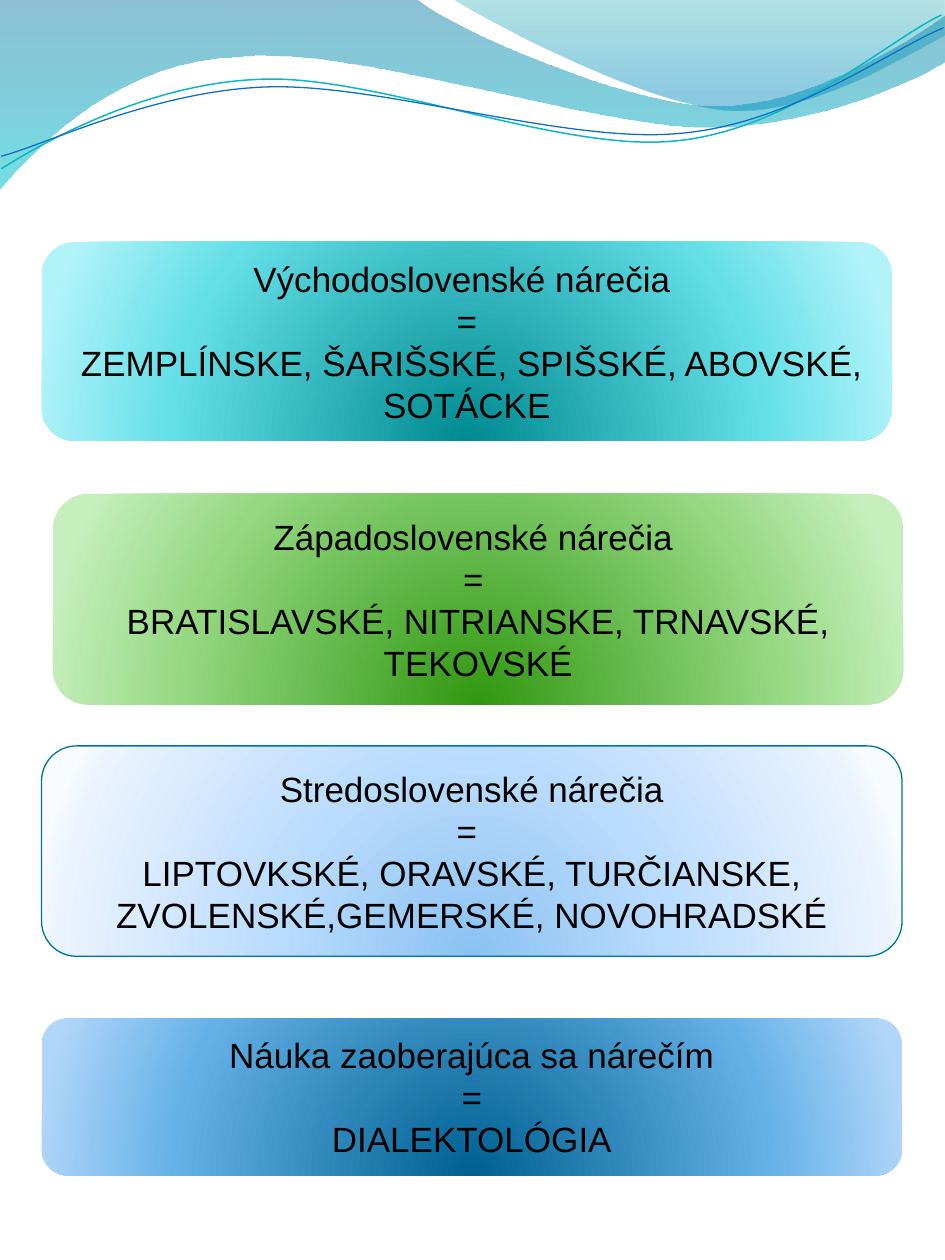
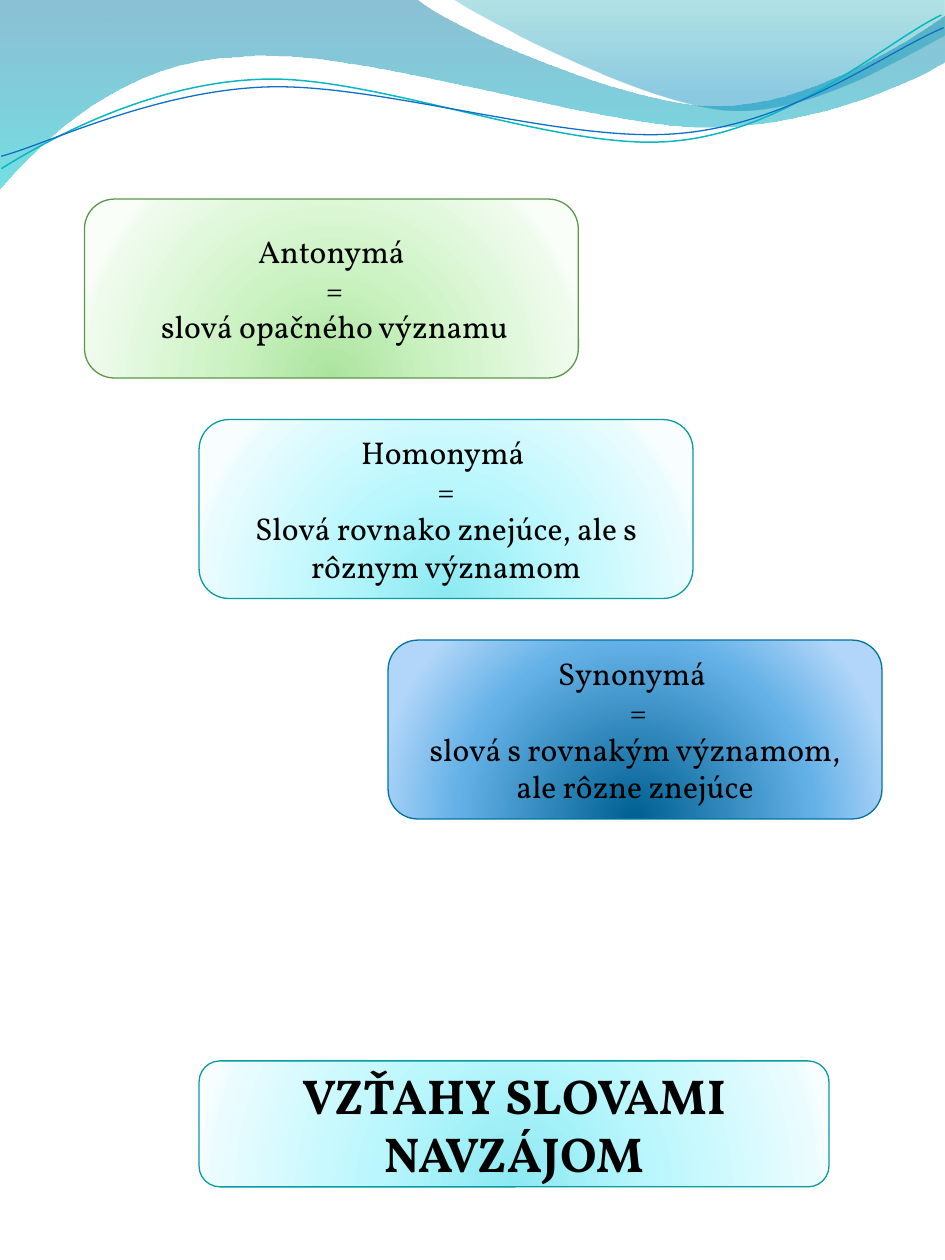
import math

import lxml.etree
import pptx
import pptx.dml.color
import pptx.enum.shapes
import pptx.enum.text
import pptx.oxml.ns
import pptx.util

Inches = pptx.util.Inches
Pt = pptx.util.Pt
qn = pptx.oxml.ns.qn

BLACK = "000000"
TEAL_LINE, BLUE_LINE, GREEN_LINE = "069CA3", "0074A1", "5B9747"
LINE_TILT = 2.7

DEEP_TEAL = [(0, "008A91"), (68, "64DFE7"), (100, "B1F3F9")]
DEEP_GREEN = [(0, "319811"), (68, "95D882"), (100, "C6EFBD")]
DEEP_BLUE = [(0, "006091"), (68, "64B1E7"), (100, "B1D6F9")]
PALE_TEAL = [(0, "8BE9F1"), (43, "B9F7FD"), (93, "EAFCFE"), (100, "F8FEFF")]
PALE_GREEN = [(0, "ACE49F"), (43, "CDF3C4"), (93, "EFFBED"), (100, "F9FFF8")]
PALE_BLUE = [(0, "8BC2F1"), (43, "B9DBFD"), (93, "EAF3FE"), (100, "F8FBFF")]

DIALECT_FONT = {"name": "Arial", "size": Pt(20)}
RELATION_FONT = {"name": "Vollkorn", "size": Pt(18)}
HEADING_FONT = {"name": "Vollkorn", "size": Pt(28), "bold": True}

# Each wave segment holds one end point, or two control points and an end point.
WIDE_WAVE = [
    (0, -0.01), (3.3, -0.01),
    (3.57, 0.22, 4.98, 0.84, 5.69, 0.84), (6.4, 0.84, 7.19, 0.34, 7.5, 0.12),
    (7.51, 0.48),
    (7.38, 0.58, 6.52, 1.01, 5.59, 1.01), (4.66, 1, 2.86, 0.37, 1.93, 0.45),
    (0.97, 0.47, 0.34, 1.11, -0.01, 1.51), (0, -0.01),
]
RIGHT_WAVE = [
    (3.59, -0.01),
    (3.82, 0.15, 5.11, 0.82, 5.77, 0.87), (6.42, 0.92, 7.21, 0.43, 7.5, 0.28),
    (7.5, 0), (3.59, -0.01),
]
TEAL_WAVE = [
    (0.01, 1.34),
    (0.36, 1.12, 1.18, 0.66, 2.07, 0.63), (2.96, 0.59, 4.45, 1.21, 5.35, 1.12),
    (6.26, 1.04, 7.03, 0.33, 7.47, 0.12),
]
BLUE_WAVE = [
    (0.01, 1.24),
    (0.36, 1.15, 1.22, 0.72, 2.12, 0.69), (3.02, 0.66, 4.49, 1.14, 5.38, 1.06),
    (6.28, 0.99, 7.05, 0.4, 7.49, 0.22),
]


def color(hex_text):
    """Return the colour for a hex string."""
    return pptx.dml.color.RGBColor.from_string(hex_text)


def set_line(shape, hex_text=None, width=0.75):
    """Give a shape a solid outline, or none."""
    if hex_text is None:
        shape.line.fill.background()
        return
    shape.line.color.rgb = color(hex_text)
    shape.line.width = Pt(width)


def set_gradient(shape, stops, radial=False):
    """Fill a shape with a downward or a radial gradient of (position, colour, opacity) stops."""
    shape.fill.background()
    properties = shape.element.spPr
    gradient = lxml.etree.Element(qn("a:gradFill"), rotWithShape="1")
    stop_list = lxml.etree.SubElement(gradient, qn("a:gsLst"))
    for position, hex_text, *opacity in stops:
        stop = lxml.etree.SubElement(stop_list, qn("a:gs"), pos=str(position * 1000))
        tint = lxml.etree.SubElement(stop, qn("a:srgbClr"), val=hex_text)
        for percent in opacity:
            lxml.etree.SubElement(tint, qn("a:alpha"), val=str(percent * 1000))
    if radial:
        circle = lxml.etree.SubElement(gradient, qn("a:path"), {"path": "circle"})
        lxml.etree.SubElement(circle, qn("a:fillToRect"),
                              l="50000", t="130000", r="50000", b="-30000")
    else:
        lxml.etree.SubElement(gradient, qn("a:lin"), ang="5400000", scaled="1")
    properties.replace(properties.find(qn("a:noFill")), gradient)


def turn(point, degrees):
    """Turn a point clockwise around the middle of the wave lines."""
    middle_x, middle_y = 3.75, 0.78
    x, y = point[0] - middle_x, point[1] - middle_y
    sine, cosine = math.sin(math.radians(degrees)), math.cos(math.radians(degrees))
    return middle_x + x * cosine - y * sine, middle_y + x * sine + y * cosine


def add_wave(slide, segments, closed, tilt=0):
    """Draw one wave of straight and cubic segments, tilted anticlockwise."""
    points = [turn(segment[i:i + 2], tilt)
              for segment in segments for i in range(0, len(segment), 2)]
    first, *others = [(Inches(x), Inches(y)) for x, y in points]
    builder = slide.shapes.build_freeform(*first)
    builder.add_line_segments(others, close=closed)
    wave = builder.convert_to_shape()
    wave.shadow.inherit = False
    wave.rotation = -tilt % 360
    straights = iter(list(wave.element.iter(qn("a:lnTo"))))
    for segment in segments[1:]:
        group = [next(straights) for _ in range(len(segment) // 2)]
        if len(group) == 3:
            curve = lxml.etree.Element(qn("a:cubicBezTo"))
            group[0].addprevious(curve)
            for straight in group:
                curve.append(straight[0])
                straight.getparent().remove(straight)
    return wave


def add_wave_band(slide, layout):
    """Draw the wave band and hand it to the layout that the slides share."""
    for segments, stops in (
        (WIDE_WAVE, [(0, "0074A1", 45), (100, "00C6CF", 55)]),
        (RIGHT_WAVE, [(0, "00A1A9", 30), (80, "008BBF", 45)]),
    ):
        wave = add_wave(slide, segments, True)
        set_gradient(wave, stops)
        set_line(wave)
        layout.shapes.element.append(wave.element)
    for segments, hex_text, width in ((TEAL_WAVE, "0AB8BF", 0.85),
                                      (BLUE_WAVE, "0F6FC6", 0.75)):
        wave = add_wave(slide, segments, False, LINE_TILT)
        wave.fill.background()
        set_line(wave, hex_text, width)
        layout.shapes.element.append(wave.element)


def add_card(slide, box, lines, stops, outline, font):
    """Place a rounded card with centred lines in the given box."""
    card = slide.shapes.add_shape(
        pptx.enum.shapes.MSO_SHAPE.ROUNDED_RECTANGLE, *map(Inches, box))
    card.shadow.inherit = False
    set_gradient(card, stops, radial=True)
    set_line(card, outline)
    frame = card.text_frame
    frame.word_wrap = True
    frame.vertical_anchor = pptx.enum.text.MSO_ANCHOR.MIDDLE
    for index, line in enumerate(lines):
        paragraph = frame.add_paragraph() if index else frame.paragraphs[0]
        paragraph.alignment = pptx.enum.text.PP_ALIGN.CENTER
        run = paragraph.add_run()
        run.text = line
        run.font.color.rgb = color(BLACK)
        for attribute, value in font.items():
            setattr(run.font, attribute, value)


def fill_dialects(slide):
    """Place the dialect groups and the name of their science."""
    for box, lines, stops, outline in (
        ((0.33, 1.92, 6.75, 1.58),
         ("Východoslovenské nárečia ", "=",
          " ZEMPLÍNSKE, ŠARIŠSKÉ, SPIŠSKÉ, ABOVSKÉ, SOTÁCKE"), DEEP_TEAL, None),
        ((0.42, 3.92, 6.75, 1.67),
         ("Západoslovenské nárečia ", "= ",
          "BRATISLAVSKÉ, NITRIANSKE, TRNAVSKÉ, TEKOVSKÉ"), DEEP_GREEN, None),
        ((0.33, 5.92, 6.83, 1.67),
         ("Stredoslovenské nárečia", "= ",
          "LIPTOVKSKÉ, ORAVSKÉ, TURČIANSKE, ZVOLENSKÉ,GEMERSKÉ, NOVOHRADSKÉ"),
         PALE_BLUE, BLUE_LINE),
        ((0.33, 8.08, 6.83, 1.25),
         ("Náuka zaoberajúca sa nárečím", " = ", "DIALEKTOLÓGIA"), DEEP_BLUE, None),
    ):
        add_card(slide, box, lines, stops, outline, DIALECT_FONT)


def fill_relations(slide):
    """Place the stepped word relations and their heading."""
    relations = (
        (0.67, ("Antonymá", " =", " slová opačného významu"),
         PALE_GREEN, GREEN_LINE),
        (1.58, ("Homonymá ", "=", "Slová rovnako znejúce, ale s rôznym významom"),
         PALE_TEAL, TEAL_LINE),
        (3.08, ("Synonymá ", " =", "slová s rovnakým významom, ale rôzne znejúce"),
         DEEP_BLUE, BLUE_LINE),
    )
    for step, (left, lines, stops, outline) in enumerate(relations):
        add_card(slide, (left, 1.58 + 1.75 * step, 3.92, 1.42),
                 lines, stops, outline, RELATION_FONT)
    add_card(slide, (1.58, 8.42, 5, 1), ("VZŤAHY SLOVAMI NAVZÁJOM",),
             PALE_TEAL, TEAL_LINE, HEADING_FONT)


def main():
    """Build both slides and save them."""
    presentation = pptx.Presentation()
    presentation.slide_width = Inches(7.5)
    presentation.slide_height = Inches(10)
    blank = presentation.slide_layouts[6]
    dialects = presentation.slides.add_slide(blank)
    add_wave_band(dialects, blank)
    fill_dialects(dialects)
    fill_relations(presentation.slides.add_slide(blank))
    presentation.save("out.pptx")


if __name__ == "__main__":
    main()
